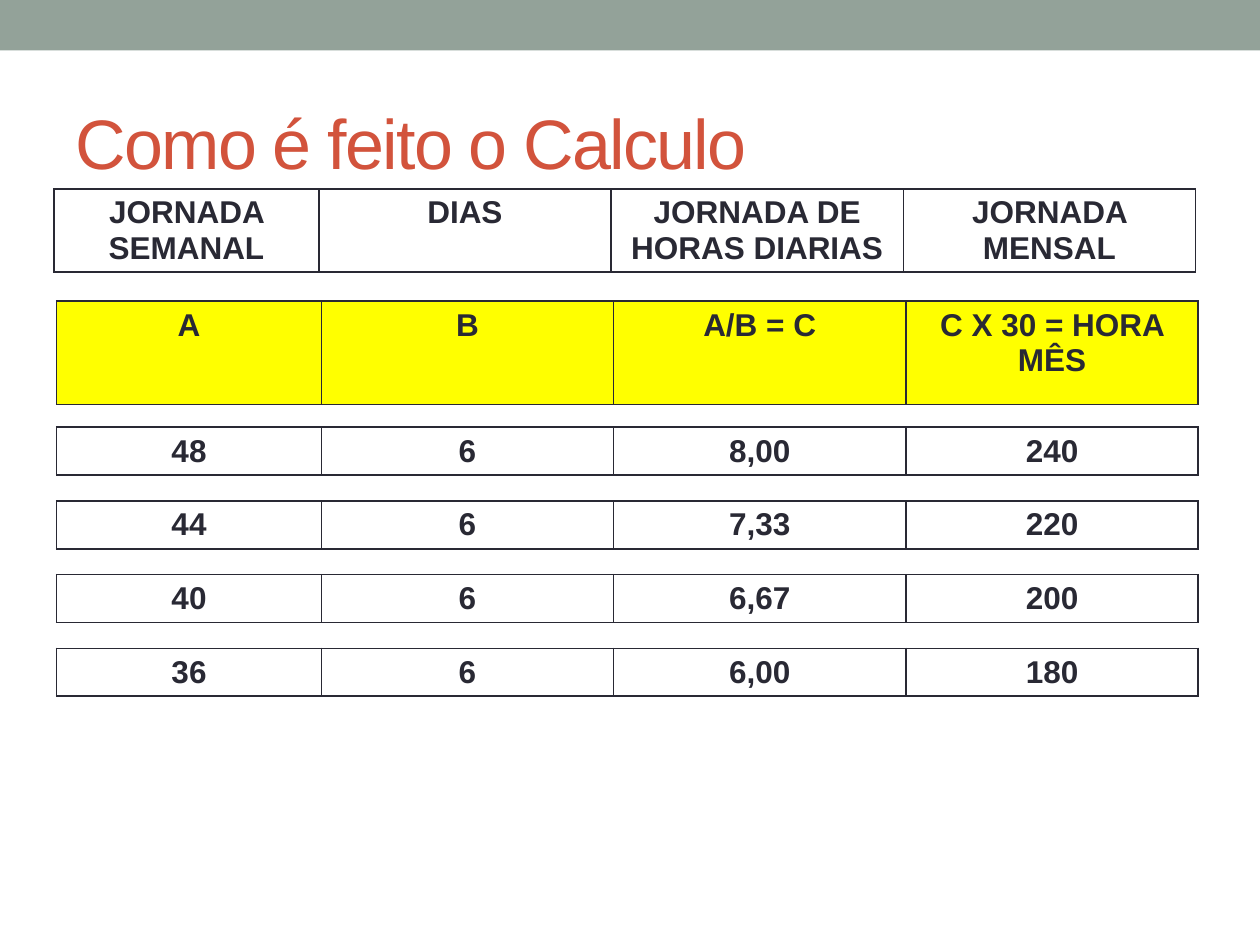
from dataclasses import dataclass

from lxml.etree import SubElement
from pptx import Presentation
from pptx.dml.color import RGBColor
from pptx.enum.shapes import MSO_SHAPE
from pptx.enum.text import MSO_ANCHOR, MSO_AUTO_SIZE, PP_ALIGN
from pptx.oxml.ns import qn
from pptx.util import Inches, Pt


@dataclass(frozen=True)
class Theme:
    font: str = "Arial"
    band: str = "93A299"
    title: str = "D2533C"
    ink: str = "292934"
    highlight: str = "FFFF00"
    title_size: int = 40
    cell_size: int = 18
    border_width: int = 1


THEME = Theme()
SLIDE_WIDTH, SLIDE_HEIGHT = 10, 7.5
COLUMNS = (2.1, 2.32, 2.32, 2.32)
TABLE_LEFT = 0.45
DATA_TOP, DATA_HEIGHT, DATA_PITCH = 3.39, 0.38, 0.585

HEADINGS = ("JORNADA SEMANAL", "DIAS", "JORNADA DE HORAS DIARIAS", "JORNADA MENSAL")
FORMULAS = ("A", "B", "A/B = C", "C X 30 = HORA MÊS")
SCHEDULES = (
    ("48", "6", "8,00", "240"),
    ("44", "6", "7,33", "220"),
    ("40", "6", "6,67", "200"),
    ("36", "6", "6,00", "180"),
)


def add_text(paragraph, text, size, color, bold=False):
    run = paragraph.add_run()
    run.text = text
    run.font.name = THEME.font
    run.font.size = Pt(size)
    run.font.bold = bold
    run.font.color.rgb = RGBColor.from_string(color)
    return run


def add_band(slide, left, top, width, height):
    band = slide.shapes.add_shape(
        MSO_SHAPE.RECTANGLE, Inches(left), Inches(top), Inches(width), Inches(height))
    band.shadow.inherit = False
    band.fill.solid()
    band.fill.fore_color.rgb = RGBColor.from_string(THEME.band)
    band.line.fill.background()
    # Keep the band behind the title
    slide.shapes.title._element.addprevious(band._element)


def place_title(slide, text, left, top, width, height):
    title = slide.shapes.title
    title.left, title.top = Inches(left), Inches(top)
    title.width, title.height = Inches(width), Inches(height)
    frame = title.text_frame
    frame.word_wrap = True
    frame.auto_size = MSO_AUTO_SIZE.NONE
    frame.vertical_anchor = MSO_ANCHOR.MIDDLE
    paragraph = frame.paragraphs[0]
    paragraph.alignment = PP_ALIGN.LEFT
    run = add_text(paragraph, text, THEME.title_size, THEME.title)
    # Letter spacing in hundredths of a point
    run.font._element.set("spc", "-100")


def set_borders(cell):
    properties = cell._tc.get_or_add_tcPr()
    for position, side in enumerate(("a:lnL", "a:lnR", "a:lnT", "a:lnB")):
        line = SubElement(properties, qn(side), w=str(Pt(THEME.border_width)))
        fill = SubElement(line, qn("a:solidFill"))
        SubElement(fill, qn("a:srgbClr"), val=THEME.ink)
        # Borders come before the cell fill
        properties.insert(position, line)


def add_row_table(slide, texts, left, top, height, fill=None):
    frame = slide.shapes.add_table(
        1, len(COLUMNS), Inches(left), Inches(top), Inches(sum(COLUMNS)), Inches(height))
    table = frame.table
    table.first_row = table.horz_banding = False
    for column, width in zip(table.columns, COLUMNS):
        column.width = Inches(width)
    for cell, text in zip(table.rows[0].cells, texts):
        if fill:
            cell.fill.solid()
            cell.fill.fore_color.rgb = RGBColor.from_string(fill)
        else:
            cell.fill.background()
        set_borders(cell)
        paragraph = cell.text_frame.paragraphs[0]
        paragraph.alignment = PP_ALIGN.CENTER
        add_text(paragraph, text, THEME.cell_size, THEME.ink, bold=True)


def main():
    presentation = Presentation()
    presentation.slide_width = Inches(SLIDE_WIDTH)
    presentation.slide_height = Inches(SLIDE_HEIGHT)
    slide = presentation.slides.add_slide(presentation.slide_layouts.get_by_name("Title Only"))

    # Top band and title
    add_band(slide, 0, 0, SLIDE_WIDTH, 0.4)
    place_title(slide, "Como é feito o Calculo", 0.5, 0.58, 0.9 * SLIDE_WIDTH, 1.08)

    # Headings and formulas
    add_row_table(slide, HEADINGS, 0.43, 1.5, 0.66)
    add_row_table(slide, FORMULAS, TABLE_LEFT, 2.39, 0.82, THEME.highlight)

    # One table for each weekly schedule
    for index, schedule in enumerate(SCHEDULES):
        add_row_table(slide, schedule, TABLE_LEFT, DATA_TOP + index * DATA_PITCH, DATA_HEIGHT)

    presentation.save("out.pptx")


if __name__ == "__main__":
    main()
